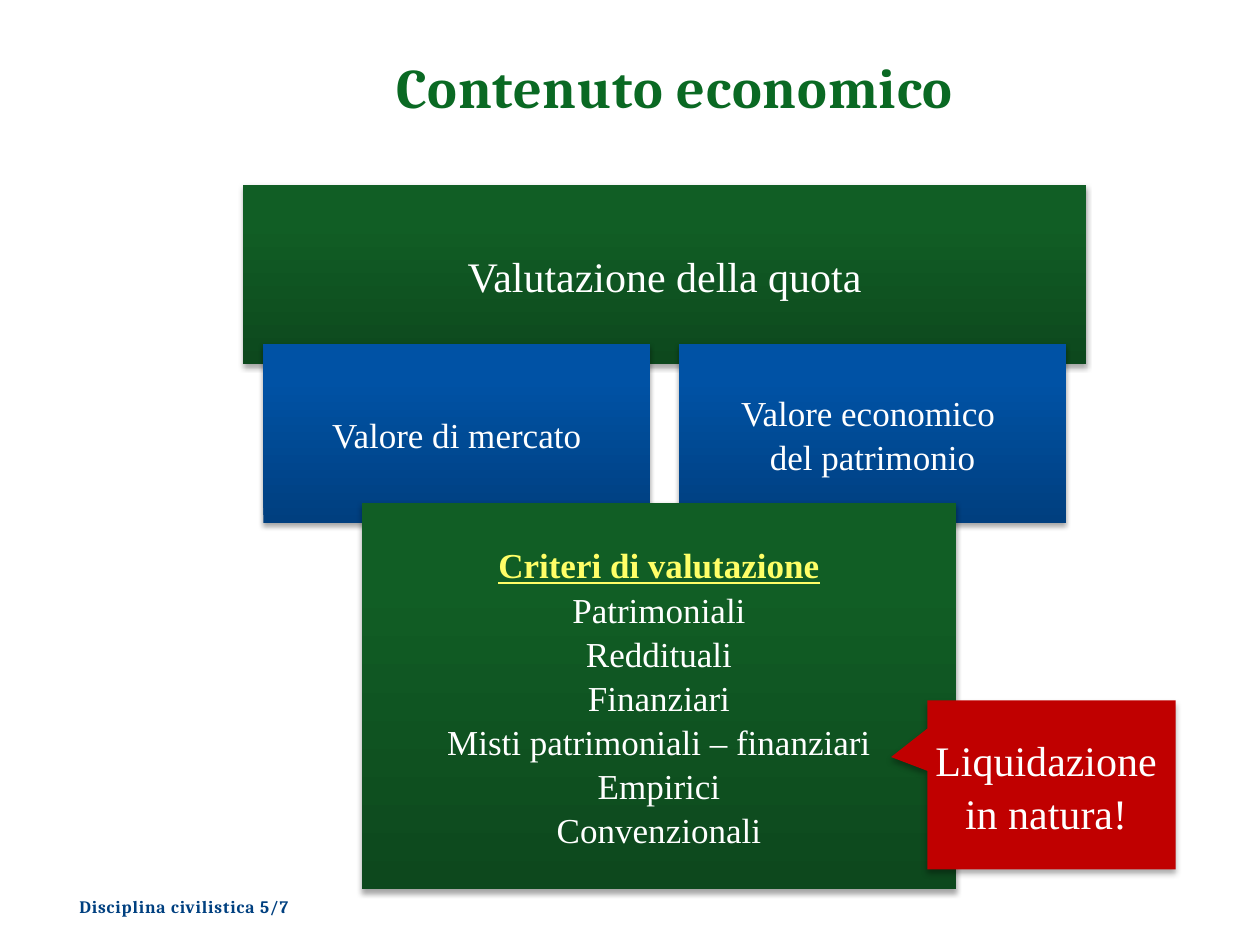
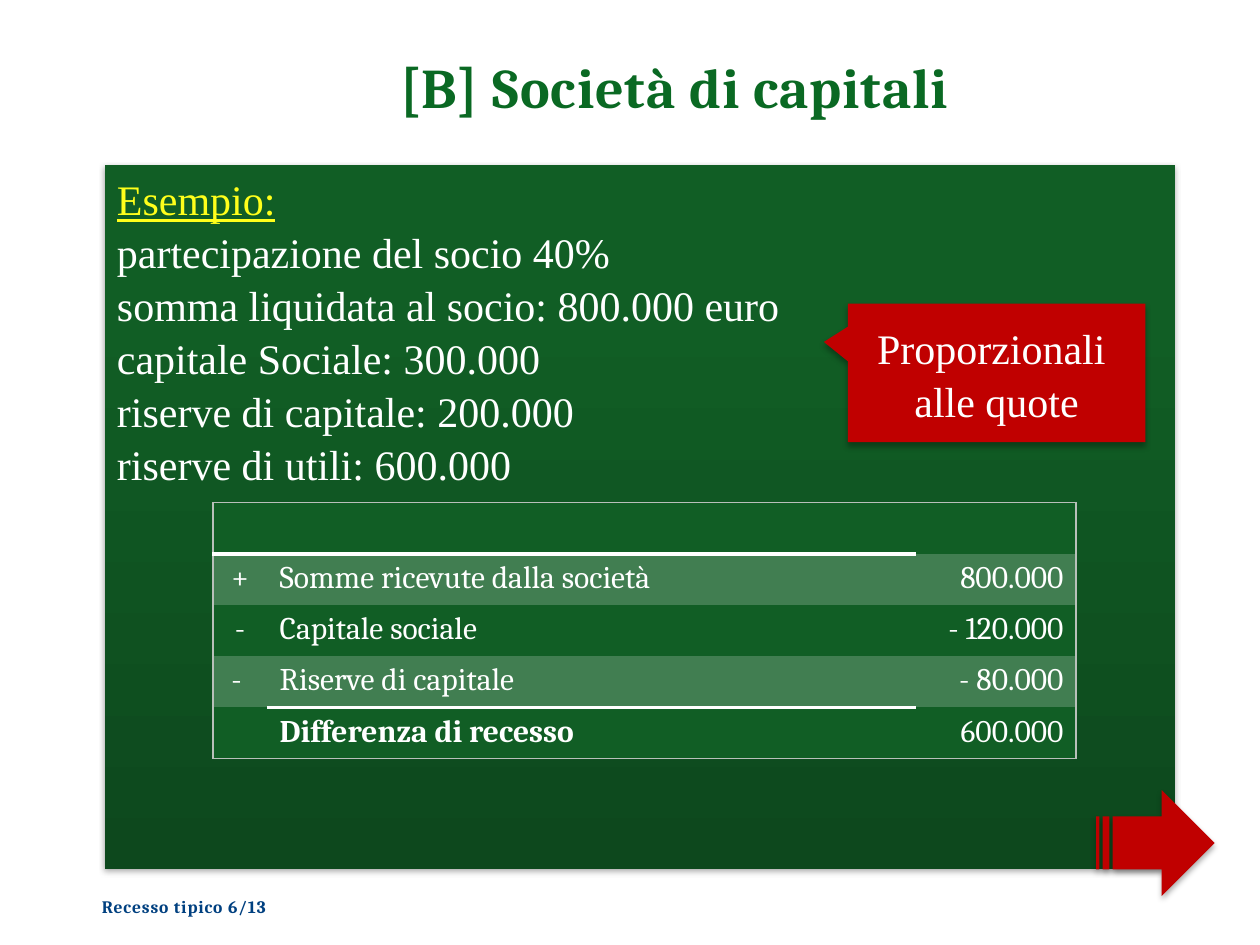
import collections

import pptx
import pptx.dml.color
import pptx.enum.shapes
import pptx.enum.text
import pptx.oxml
import pptx.oxml.ns
import pptx.util

Inches = pptx.util.Inches
RGBColor = pptx.dml.color.RGBColor
ALIGN = pptx.enum.text.PP_ALIGN
ANCHOR = pptx.enum.text.MSO_ANCHOR
SHAPE = pptx.enum.shapes.MSO_SHAPE
Box = collections.namedtuple("Box", "left top width height")

# Shared colours, fonts and places
WHITE = RGBColor(0xFF, 0xFF, 0xFF)
TITLE_GREEN = RGBColor(0x0A, 0x69, 0x23)
GREEN = RGBColor(0x11, 0x5E, 0x25)
DARK_GREEN = RGBColor(0x0D, 0x48, 0x1D)
STRIPE_GREEN = RGBColor(0x41, 0x7E, 0x51)
BLUE = RGBColor(0x00, 0x52, 0xA5)
DARK_BLUE = RGBColor(0x00, 0x3F, 0x7F)
FOOTER_BLUE = RGBColor(0x00, 0x40, 0x80)
RED = RGBColor(0xC0, 0x00, 0x00)
PALE_YELLOW = RGBColor(0xFF, 0xFF, 0x67)
YELLOW = RGBColor(0xFF, 0xFF, 0x1B)
BORDER_GREY = RGBColor(0xB9, 0xC0, 0xBA)
GREEN_FADE = (DARK_GREEN, GREEN)
BLUE_FADE = (DARK_BLUE, BLUE)
HEADING_FONT = "Cambria"
BODY_FONT = "Times New Roman"
TITLE_BOX = Box(1.14, 0.25, 8.43, 0.75)
FOOTER_BOX = Box(0.12, 7.06, 2.68, 0.27)
PLAIN_TABLE_STYLE = "{2D5ABB26-0587-4C30-8999-92F81FD0307C}"


def inches(box):
    return [Inches(value) for value in box]


def inside(box, left, top, width, height):
    """Box whose offsets are counted from the corner of another box."""
    return Box(box.left + left, box.top + top, width, height)


def write(frame, lines, size=24, font=BODY_FONT, color=WHITE, bold=False, align=ALIGN.CENTER,
          anchor=ANCHOR.MIDDLE, wrap=False, line_spacing=1.05, tracking=0, heading_color=None,
          heading_bold=False):
    """Writes one paragraph a line; heading_color marks the first as an underlined heading."""
    frame.word_wrap = wrap
    frame.vertical_anchor = anchor
    for index, line in enumerate(lines):
        paragraph = frame.paragraphs[0] if index == 0 else frame.add_paragraph()
        paragraph.alignment = align
        paragraph.line_spacing = line_spacing
        run = paragraph.add_run()
        run.text = line
        heading = index == 0 and heading_color is not None
        run.font.size = pptx.util.Pt(size)
        run.font.name = font
        run.font.bold = heading_bold if heading else bold
        run.font.color.rgb = heading_color if heading else color
        if heading:
            run.font.underline = True
        if tracking:
            run.font._element.set("spc", str(round(tracking * 100)))


def add_shadow(shape, opacity, blur, distance):
    shape.shadow.inherit = False
    effects = shape._element.spPr.find(pptx.oxml.ns.qn("a:effectLst"))
    effects.append(pptx.oxml.parse_xml(
        f'<a:outerShdw {pptx.oxml.ns.nsdecls("a")} blurRad="{pptx.util.Pt(blur)}" '
        f'dist="{pptx.util.Pt(distance)}" dir="5400000" rotWithShape="0">'
        f'<a:srgbClr val="000000"><a:alpha val="{opacity * 1000}"/></a:srgbClr></a:outerShdw>'))


def add_panel(slide, box, fade, lines, **text_format):
    """Rectangle that fades to a darker foot."""
    panel = slide.shapes.add_shape(SHAPE.RECTANGLE, *inches(box))
    panel.fill.gradient()
    panel.fill.gradient_angle = 90
    for stop, position, color in zip(panel.fill.gradient_stops, (0, 0.8), fade):
        stop.position = position
        stop.color.rgb = color
    panel.line.fill.background()
    add_shadow(panel, 35, 3.1, 1.8)
    write(panel.text_frame, lines, **text_format)


def add_red_shape(slide, kind, box):
    shape = slide.shapes.add_shape(kind, *inches(box))
    shape.fill.solid()
    shape.fill.fore_color.rgb = RED
    shape.line.fill.background()
    add_shadow(shape, 32, 3.5, 2.2)
    return shape


def add_callout(slide, box, tip, lines):
    callout = add_red_shape(slide, SHAPE.RECTANGULAR_CALLOUT, box)
    for index, offset in enumerate(tip):
        callout.adjustments[index] = offset
    write(callout.text_frame, lines)


def add_label(slide, box, text, size, color):
    label = slide.shapes.add_textbox(*inches(box))
    write(label.text_frame, [text], size=size, font=HEADING_FONT, color=color, bold=True,
          anchor=ANCHOR.BOTTOM, wrap=True, line_spacing=1, tracking=0.5)


def add_base_slide(presentation, title, footer):
    slide = presentation.slides.add_slide(presentation.slide_layouts[6])
    add_label(slide, TITLE_BOX, title, 32, TITLE_GREEN)
    add_label(slide, FOOTER_BOX, footer, 10, FOOTER_BLUE)
    return slide


def set_borders(cell, borders):
    """Draws the given sides (L, R, T, B) and hides the others."""
    properties = cell._tc.get_or_add_tcPr()
    for index, side in enumerate("LRTB"):
        color, width = borders.get(side, (None, 0))
        fill = f'<a:solidFill><a:srgbClr val="{color}"/></a:solidFill>' if color else "<a:noFill/>"
        properties.insert(index, pptx.oxml.parse_xml(
            f'<a:ln{side} {pptx.oxml.ns.nsdecls("a")} w="{pptx.util.Pt(width)}">{fill}</a:ln{side}>'))


def cell_borders(row, column, last_row, last_column):
    frame_line, header_line, total_line = (BORDER_GREY, 0.75), (WHITE, 3), (WHITE, 2)
    borders = {}
    if column == 0:
        borders["L"] = frame_line
    if column == last_column:
        borders["R"] = frame_line
    if row == 0:
        borders["T"] = frame_line
    if row == last_row:
        borders["B"] = frame_line
    # The header rule spans the first two columns, the total rule the second
    if column < last_column and row in (0, 1):
        borders["B" if row == 0 else "T"] = header_line
    if column == 1 and row in (last_row - 1, last_row):
        borders["T" if row == last_row else "B"] = total_line
    return borders


def add_withdrawal_table(slide, box):
    rows = [
        ("", "", ""),
        ("+", "Somme ricevute dalla società", "800.000"),
        ("-", "Capitale sociale", "- 120.000"),
        ("- ", "Riserve di capitale", "- 80.000"),
        ("", "Differenza di recesso", "600.000"),
    ]
    widths = (0.43, 5.15, 1.27)
    aligns = (ALIGN.CENTER, ALIGN.LEFT, ALIGN.RIGHT)
    last_row, last_column = len(rows) - 1, len(widths) - 1
    table = slide.shapes.add_table(len(rows), len(widths), *inches(box)).table
    table._tbl.tblPr.find(pptx.oxml.ns.qn("a:tableStyleId")).text = PLAIN_TABLE_STYLE
    for column, width in zip(table.columns, widths):
        column.width = Inches(width)
    for row, texts in enumerate(rows):
        table.rows[row].height = Inches(box.height / len(rows))
        for column, text in enumerate(texts):
            cell = table.cell(row, column)
            cell.fill.solid()
            cell.fill.fore_color.rgb = STRIPE_GREEN if row % 2 else GREEN
            set_borders(cell, cell_borders(row, column, last_row, last_column))
            if text:
                write(cell.text_frame, [text], size=18, font=HEADING_FONT, align=aligns[column],
                      anchor=ANCHOR.TOP, wrap=True, line_spacing=1,
                      bold=(row, column) == (last_row, 1))


def add_valuation_diagram(slide, box):
    # Share valuation, then its two values side by side
    add_panel(slide, inside(box, 0, 0, box.width, 1.42), GREEN_FADE, ["Valutazione della quota"])
    values = (["Valore di mercato"], ["Valore economico ", "del patrimonio"])
    for index, lines in enumerate(values):
        add_panel(slide, inside(box, 0.16 + index * 3.3, 1.26, 3.07, 1.42), BLUE_FADE, lines, size=20)
    # Valuation criteria
    criteria = ["Criteri di valutazione", "Patrimoniali", "Reddituali", "Finanziari",
                "Misti patrimoniali – finanziari", "Empirici", "Convenzionali"]
    add_panel(slide, inside(box, 0.94, 2.52, 4.72, 3.07), GREEN_FADE, criteria, size=20,
              heading_color=PALE_YELLOW, heading_bold=True)
    add_callout(slide, inside(box, 5.43, 4.09, 1.97, 1.34), (-0.646, -0.165),
                ["Liquidazione ", "in natura! "])


def add_example(slide, box):
    # Figures of the example
    figures = ["Esempio:", "partecipazione del socio 40%",
               "somma liquidata al socio: 800.000 euro", "capitale Sociale: 300.000",
               "riserve di capitale: 200.000", "riserve di utili: 600.000"]
    add_panel(slide, box, GREEN_FADE, figures, align=ALIGN.LEFT, anchor=ANCHOR.TOP,
              heading_color=YELLOW)
    add_withdrawal_table(slide, inside(box, 0.86, 2.68, 6.85, 2.03))
    # Arrow to the next slide, and remark
    add_red_shape(slide, SHAPE.STRIPED_RIGHT_ARROW, inside(box, 7.87, 4.96, 0.94, 0.84))
    add_callout(slide, inside(box, 5.9, 1.1, 2.36, 1.1), (-0.581, -0.223),
                ["Proporzionali ", "alle quote"])


def main():
    presentation = pptx.Presentation()
    presentation.slide_width = Inches(10)
    presentation.slide_height = Inches(7.5)

    slide = add_base_slide(presentation, "Contenuto economico", "Disciplina civilistica 5/7")
    add_valuation_diagram(slide, Box(1.93, 1.47, 6.69, 5.59))

    slide = add_base_slide(presentation, "[B] Società di capitali", "Recesso tipico 6/13")
    add_example(slide, Box(0.83, 1.31, 8.5, 5.59))

    presentation.save("out.pptx")


if __name__ == "__main__":
    main()
